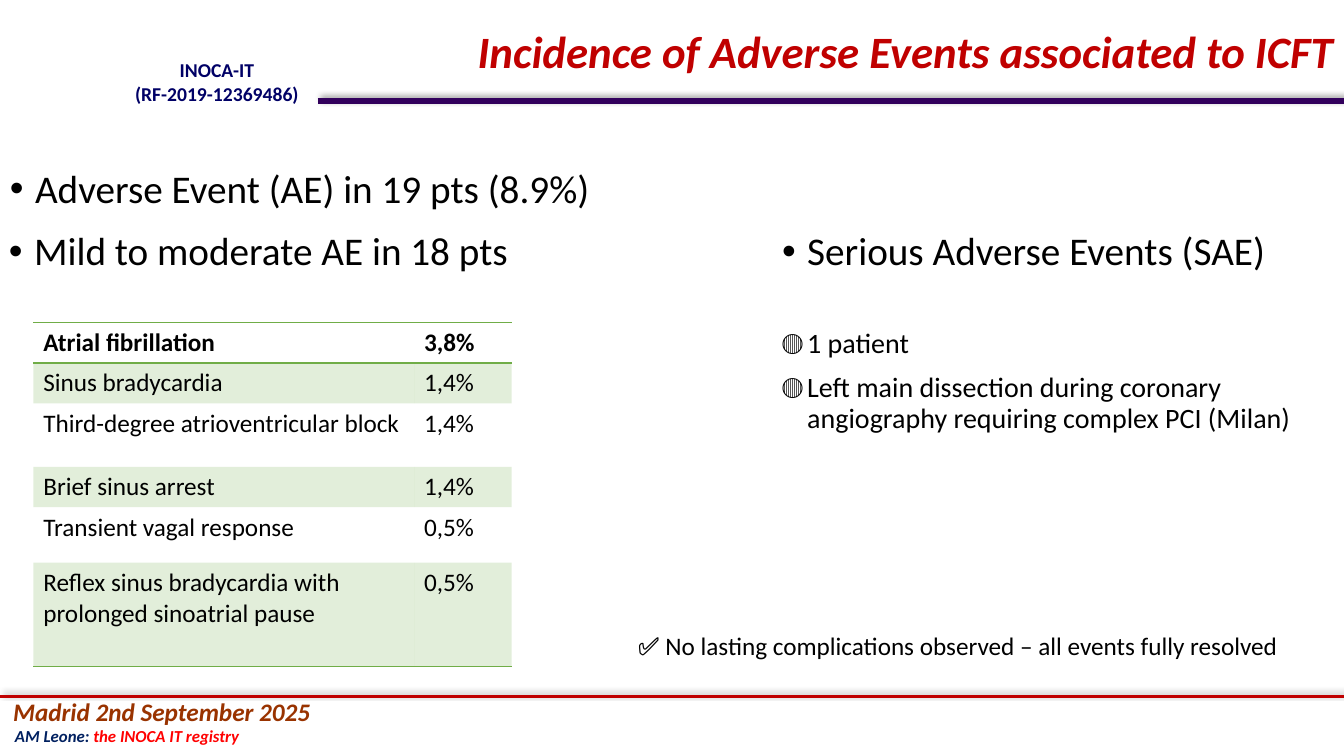
from lxml import etree
from pptx import Presentation
from pptx.dml.color import RGBColor
from pptx.enum.shapes import MSO_CONNECTOR
from pptx.enum.text import MSO_ANCHOR, PP_ALIGN
from pptx.oxml.ns import qn
from pptx.util import Pt

STRAIGHT = MSO_CONNECTOR.STRAIGHT
TOP, MIDDLE = MSO_ANCHOR.TOP, MSO_ANCHOR.MIDDLE
LEFT, CENTER, RIGHT = PP_ALIGN.LEFT, PP_ALIGN.CENTER, PP_ALIGN.RIGHT

BLACK = RGBColor(0x00, 0x00, 0x00)
DARK_RED = RGBColor(0xC0, 0x00, 0x00)
RED = RGBColor(0xFF, 0x00, 0x00)
PURPLE = RGBColor(0x32, 0x00, 0x5C)
BROWN = RGBColor(0x99, 0x33, 0x00)
NAVY = RGBColor(0x00, 0x20, 0x60)
BLUE = RGBColor(0x00, 0x00, 0x66)
GREEN = RGBColor(0x70, 0xAD, 0x47)

FONT = "Calibri"
SLIDE_W, SLIDE_H = 960, 540
NO_STYLE = "{2D5ABB26-0587-4C30-8999-92F81FD0307C}"

EVENTS = [
    ("Atrial fibrillation", "3,8%", 27.4),
    ("Sinus bradycardia", "1,4%", 27.4),
    ("Third-degree atrioventricular block", "1,4%", 45.4),
    ("Brief sinus arrest", "1,4%", 27.4),
    ("Transient vagal response", "0,5%", 39.6),
    ("Reflex sinus bradycardia with prolonged sinoatrial pause", "0,5%", 74.2),
]


def add_xml(parent, tag, **attrs):
    return etree.SubElement(parent, qn(tag), **attrs)


def style(p, size, color, bold=False, italic=False):
    f = p.font
    f.name, f.size, f.bold, f.italic = FONT, Pt(size), bold, italic
    f.color.rgb = color


def add_text(slide, box, lines, size, color, bold=False, italic=False,
             align=LEFT, anchor=TOP, bullet=None, bullet_pct=100, spacing=None):
    """Place one paragraph per line; a line is a list of (text, color) runs or a string."""
    sp = slide.shapes.add_textbox(*map(Pt, box))
    tf = sp.text_frame
    tf.word_wrap = True
    tf.vertical_anchor = anchor
    for i, line in enumerate(lines):
        p = tf.paragraphs[0] if i == 0 else tf.add_paragraph()
        p.alignment = align
        if spacing:
            p.line_spacing = spacing
        if bullet:
            if i:
                p.space_before = Pt(10)
            pPr = p._p.get_or_add_pPr()
            pPr.set("marL", str(Pt(18)))
            pPr.set("indent", str(-Pt(18)))
            add_xml(pPr, "a:buSzPct", val=str(bullet_pct * 1000))
            add_xml(pPr, "a:buFont", typeface="Arial")
            add_xml(pPr, "a:buChar", char=bullet)
        style(p, size, color, bold, italic)
        for text, run_color in [(line, None)] if isinstance(line, str) else line:
            r = p.add_run()
            r.text = text
            if run_color is not None:
                r.font.color.rgb = run_color


def add_rule(slide, x1, x2, y, color, width):
    """Horizontal rule with a soft shadow."""
    line = slide.shapes.add_connector(STRAIGHT, Pt(x1), Pt(y), Pt(x2), Pt(y))
    line.line.color.rgb = color
    line.line.width = Pt(width)
    effects = add_xml(line.element.spPr, "a:effectLst")
    shadow = add_xml(effects, "a:outerShdw", blurRad=str(Pt(4)), dist=str(Pt(3)),
                     dir=str(315 * 60000), algn="bl", rotWithShape="0")
    add_xml(add_xml(shadow, "a:srgbClr", val="000000"), "a:alpha", val="40000")


def add_header(slide, x, y, w, h):
    add_rule(slide, x + 227, x + w, y + h, PURPLE, 4)
    add_text(slide, (x + 69, y + 38, 172, 58), ["INOCA-IT", "(RF-2019-12369486)"],
             14, BLUE, bold=True, align=CENTER)
    add_text(slide, (x + 132, y + 14.4, w - 132, 48),
             ["Incidence of Adverse Events associated to ICFT"],
             32, DARK_RED, bold=True, italic=True, align=RIGHT, anchor=MIDDLE, spacing=0.9)


def add_footer(slide, x, y, w):
    add_rule(slide, x, x + w, y, DARK_RED, 2)
    add_text(slide, (x + 2.2, y - 3.5, 857, 29), ["Madrid 2nd September 2025"],
             18, BROWN, bold=True, italic=True)
    add_text(slide, (x + 3.6, y + 17.3, 857, 24),
             [[("AM Leone:", NAVY), (" the INOCA IT registry", RED)]],
             12, NAVY, bold=True, italic=True)


def add_heading(slide, x, y, w, text):
    add_text(slide, (x, y, w, 65), [text], 28, BLACK, bullet="•", spacing=0.9)


def add_border(tcPr, index, side):
    ln = etree.Element(qn(side), w=str(Pt(1)))
    add_xml(add_xml(ln, "a:solidFill"), "a:srgbClr", val=str(GREEN))
    tcPr.insert(index, ln)


def add_events_table(slide, x, y, widths):
    frame = slide.shapes.add_table(len(EVENTS), 2, Pt(x), Pt(y), Pt(sum(widths)),
                                   Pt(sum(height for *_, height in EVENTS)))
    for style_id in frame.element.iter(qn("a:tableStyleId")):
        style_id.text = NO_STYLE
    table = frame.table
    table.first_row = table.horz_banding = False
    for column, width in zip(table.columns, widths):
        column.width = Pt(width)
    for i, (event, share, height) in enumerate(EVENTS):
        table.rows[i].height = Pt(height)
        for cell, text in zip(table.rows[i].cells, (event, share)):
            cell.text = text
            style(cell.text_frame.paragraphs[0], 18, BLACK, bold=i == 0)
            # Translucent green on every second row
            if i % 2:
                cell.fill.solid()
                cell.fill.fore_color.rgb = GREEN
                for clr in cell._tc.tcPr.iter(qn("a:srgbClr")):
                    add_xml(clr, "a:alpha", val="20000")
            else:
                cell.fill.background()
            # Rules around the first row and under the last
            sides = {0: ["a:lnT", "a:lnB"], len(EVENTS) - 1: ["a:lnB"]}.get(i, [])
            for k, side in enumerate(sides):
                add_border(cell._tc.tcPr, k, side)


def add_mild_events(slide, x, y, w):
    add_heading(slide, x, y, w, "Adverse Event (AE) in 19 pts (8.9%)")
    add_heading(slide, x - 0.7, y + 44.6, w, "Mild to moderate AE in 18 pts")
    add_events_table(slide, x + 23.8, y + 113, (272, 69.6))


def add_serious_events(slide, x, y, w):
    add_heading(slide, x, y, w, "Serious Adverse Events (SAE)")
    add_text(slide, (x, y + 69.8, w, 150),
             ["1 patient",
              "Left main dissection during coronary angiography requiring complex PCI (Milan)"],
             20, BLACK, bullet="🔴", bullet_pct=75, spacing=0.9)
    add_text(slide, (x - 103, y + 285, 488, 29),
             ["✅ No lasting complications observed – all events fully resolved"], 18, BLACK)


def main():
    prs = Presentation()
    prs.slide_width, prs.slide_height = Pt(SLIDE_W), Pt(SLIDE_H)
    slide = prs.slides.add_slide(prs.slide_layouts[6])
    add_footer(slide, 0, 497.5, SLIDE_W)
    add_header(slide, 0, 0, SLIDE_W, 72)
    add_mild_events(slide, 0, 117.4, 436)
    add_serious_events(slide, 551.5, 162, 408)
    prs.save("out.pptx")


if __name__ == "__main__":
    main()
